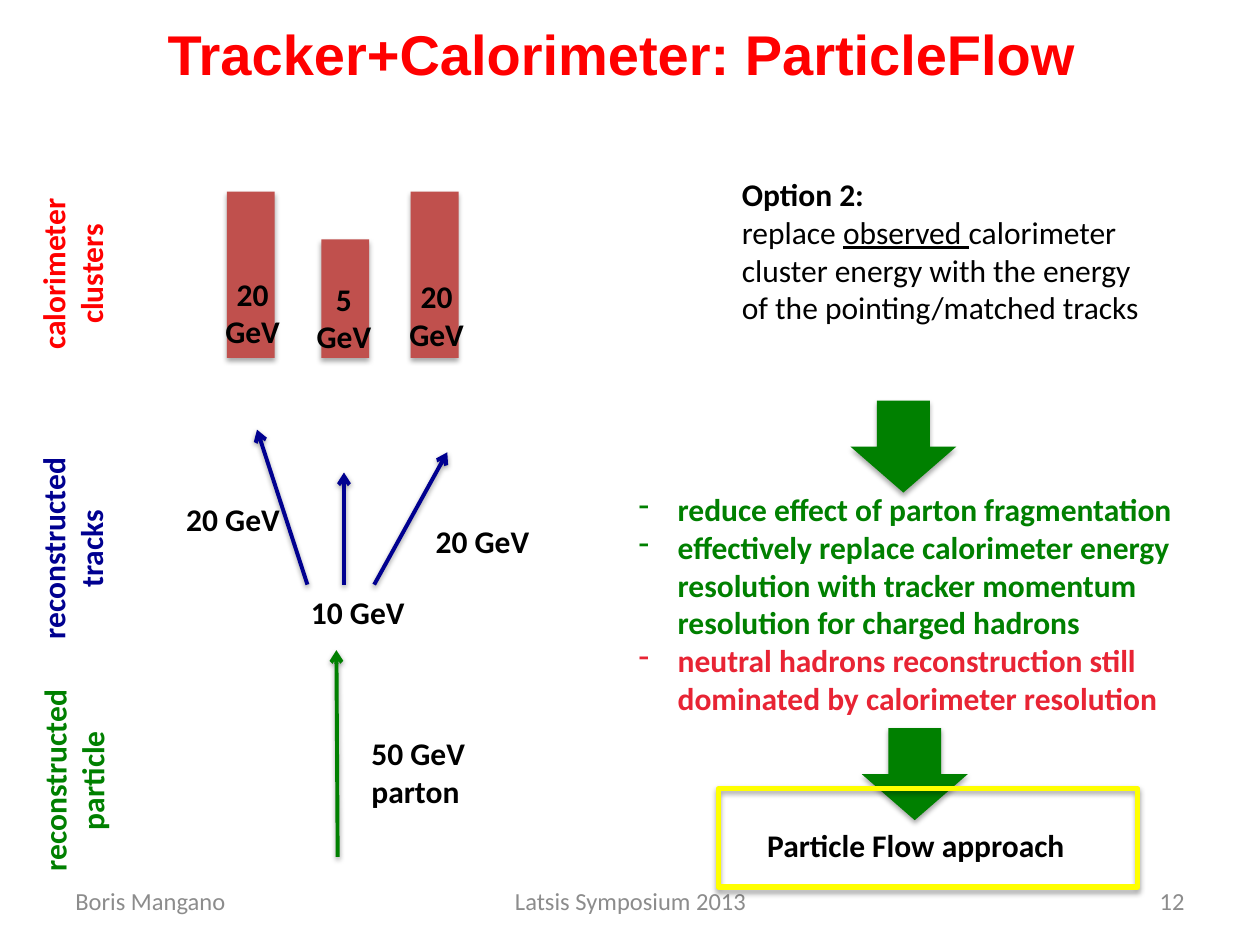
import lxml.etree
import pptx
import pptx.dml.color
import pptx.enum.shapes
import pptx.enum.text
import pptx.oxml
import pptx.oxml.ns
import pptx.util

Inches, Pt = pptx.util.Inches, pptx.util.Pt
SHAPE = pptx.enum.shapes.MSO_SHAPE
ALIGN = pptx.enum.text.PP_ALIGN
ANCHOR = pptx.enum.text.MSO_ANCHOR
rgb = pptx.dml.color.RGBColor.from_string
qn = pptx.oxml.ns.qn

BLACK, RED, GREEN, NAVY = "000000", "FF0000", "008000", "000090"
GREY, BRICK, CRIMSON, YELLOW = "8C8C8C", "C0504D", "E82434", "FFFF00"

deck = pptx.Presentation()
deck.slide_width, deck.slide_height = Inches(10), Inches(7.5)
slide = deck.slides.add_slide(deck.slide_layouts[6])


def add_text(box, paragraphs, color=BLACK, size=18, bold=True, font="Calibri",
             align=ALIGN.LEFT, anchor=ANCHOR.TOP, rotation=0, bullet=None):
    """Each paragraph is a list of (text, run overrides) pairs."""
    label = slide.shapes.add_textbox(*map(Inches, box))
    label.rotation = rotation
    frame = label.text_frame
    frame.word_wrap = True
    frame.vertical_anchor = anchor
    for index, runs in enumerate(paragraphs):
        paragraph = frame.add_paragraph() if index else frame.paragraphs[0]
        paragraph.alignment = align
        if bullet:
            properties = paragraph._p.get_or_add_pPr()
            properties.set("marL", str(Inches(0.31)))
            properties.set("indent", str(-Inches(0.31)))
            lxml.etree.SubElement(properties, qn("a:buFontTx"))
            lxml.etree.SubElement(properties, qn("a:buChar")).set("char", bullet)
        for text, style in runs:
            run = paragraph.add_run()
            run.text = text
            run.font.name = font
            run.font.size = Pt(size)
            run.font.bold = style.get("bold", bold)
            run.font.underline = style.get("underline", False)
            run.font.color.rgb = rgb(style.get("color", color))


def add_shadow(item, distance, opacity):
    """Soft shadow straight below; call it after fill and line are set."""
    effects = lxml.etree.SubElement(item._element.spPr, qn("a:effectLst"))
    shadow = lxml.etree.SubElement(effects, qn("a:outerShdw"), {
        "blurRad": str(Pt(3.1)), "dist": str(Pt(distance)),
        "dir": "5400000", "rotWithShape": "0"})
    tint = lxml.etree.SubElement(shadow, qn("a:srgbClr"), val=BLACK)
    lxml.etree.SubElement(tint, qn("a:alpha"), val=str(opacity * 1000))


# Footer
for left, width, text, align in [
        (0.5, 2.33, "Boris Mangano", ALIGN.LEFT),
        (3.42, 3.17, "Latsis Symposium 2013", ALIGN.CENTER),
        (7.17, 2.33, "12", ALIGN.RIGHT)]:
    add_text((left, 6.95, width, 0.4), [[(text, {})]], GREY, 14, False,
             align=align, anchor=ANCHOR.MIDDLE)

# Particle and track arrows
for x1, y1, x2, y2, color in [
        (2.68, 6.8, 2.67, 5.16, GREEN),
        (2.44, 4.64, 2.04, 3.41, NAVY),
        (2.73, 4.64, 2.73, 3.75, NAVY),
        (2.97, 4.64, 3.55, 3.59, NAVY)]:
    track = slide.shapes.add_connector(
        pptx.enum.shapes.MSO_CONNECTOR.STRAIGHT,
        Inches(x1), Inches(y1), Inches(x2), Inches(y2))
    track.line.color.rgb = rgb(color)
    track.line.width = Pt(2.25)
    lxml.etree.SubElement(track.line._get_or_add_ln(), qn("a:tailEnd"), type="arrow")
    add_shadow(track, 1.6, 38)

# Calorimeter clusters, down arrows and the frame of the conclusion
for kind, box, fill, outline in [
        (SHAPE.RECTANGLE, (1.8, 1.52, 0.38, 1.32), BRICK, None),
        (SHAPE.RECTANGLE, (3.26, 1.52, 0.38, 1.32), BRICK, None),
        (SHAPE.RECTANGLE, (2.55, 1.9, 0.38, 0.94), BRICK, None),
        (SHAPE.DOWN_ARROW, (6.75, 3.18, 0.84, 0.73), GREEN, None),
        (SHAPE.DOWN_ARROW, (6.84, 5.78, 0.84, 0.73), GREEN, None),
        (SHAPE.RECTANGLE, (5.7, 6.26, 3.33, 0.78), None, YELLOW)]:
    block = slide.shapes.add_shape(kind, *map(Inches, box))
    if fill:
        block.fill.solid()
        block.fill.fore_color.rgb = rgb(fill)
    else:
        block.fill.background()
    if outline:
        block.line.color.rgb = rgb(outline)
        block.line.width = Pt(3)
    else:
        block.line.fill.background()
    add_shadow(block, 1.8, 35)

# Energy labels of particle and tracks
for box, text in [
        ((2.85, 5.78, 1.04, 0.71), "50 GeV parton"),
        ((1.38, 3.92, 1.04, 0.4), "20 GeV"),
        ((2.37, 4.66, 1.04, 0.4), "10 GeV"),
        ((3.36, 4.09, 1.04, 0.4), "20 GeV")]:
    add_text(box, [[(text, {})]])

# Energy labels of clusters, and the conclusion
for box, text in [
        ((1.6, 2.13, 0.81, 0.71), "20 GeV"),
        ((3.06, 2.15, 0.81, 0.71), "20 GeV"),
        ((2.4, 2.17, 0.66, 0.71), "5 GeV"),
        ((5.82, 6.51, 2.9, 0.4), "Particle Flow approach")]:
    add_text(box, [[(text, {})]], align=ALIGN.CENTER)

# Row names, read from bottom to top
for box, text, color in [
        ((-0.31, 1.82, 1.77, 0.71), "calorimeter clusters", RED),
        ((-0.42, 4, 1.99, 0.71), "reconstructed tracks", NAVY),
        ((-0.26, 5.84, 1.69, 0.71), "reconstructed particle", GREEN)]:
    add_text(box, [[(text, {})]], color, align=ALIGN.CENTER, rotation=270)

# Option and its consequences
add_text((5.79, 1.34, 3.46, 1.31), [
    [("Option 2:", {})],
    [("replace ", {"bold": False}),
     ("observed ", {"bold": False, "underline": True}),
     ("calorimeter cluster energy with the energy of the pointing/matched tracks",
      {"bold": False})]])
add_text((4.97, 3.84, 4.72, 1.92), [
    [("reduce effect of parton fragmentation", {})],
    [("effectively replace calorimeter energy resolution with tracker momentum "
      "resolution for charged hadrons", {})],
    [("neutral hadrons reconstruction still dominated by calorimeter resolution",
      {"color": CRIMSON})]], GREEN, bullet="-")

# Title
add_text((0.91, 0.11, 8.05, 0.64), [[("Tracker+Calorimeter: ParticleFlow", {})]],
         RED, 32, font="Arial", align=ALIGN.CENTER)

deck.save("out.pptx")
